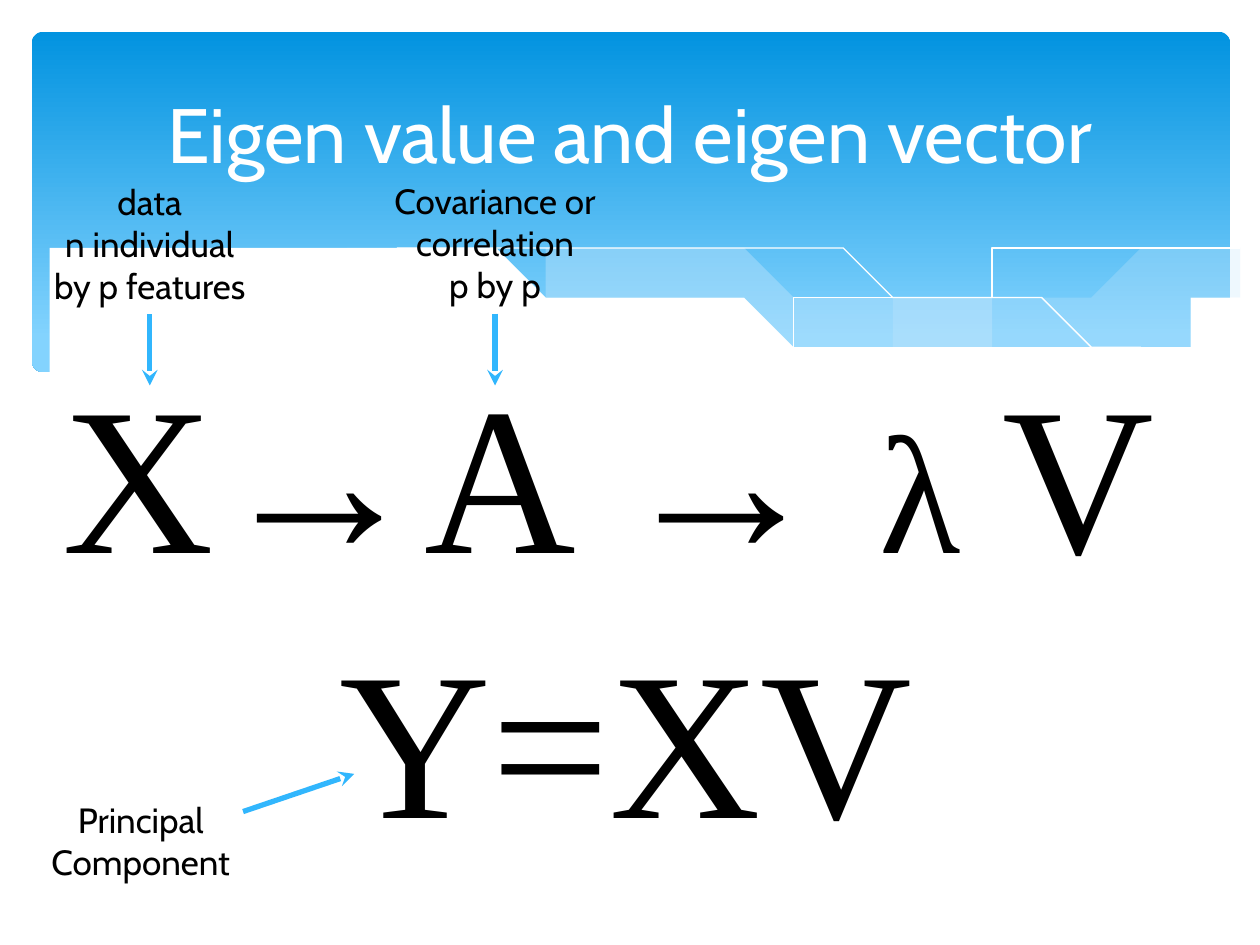
from lxml import etree
from pptx import Presentation
from pptx.dml.color import RGBColor
from pptx.enum.shapes import MSO_CONNECTOR, MSO_SHAPE
from pptx.enum.text import MSO_ANCHOR, PP_ALIGN
from pptx.oxml.ns import qn
from pptx.util import Cm, Pt

WHITE = RGBColor(0xFF, 0xFF, 0xFF)
BLACK = RGBColor(0, 0, 0)
DEEP_BLUE = RGBColor(0x02, 0x93, 0xE0)
LIGHT_BLUE = RGBColor(0x83, 0xD3, 0xFE)
MIST = RGBColor(0xC6, 0xE7, 0xFC)
ARROW_BLUE = RGBColor(0x31, 0xB6, 0xFD)
SANS, SERIF = "Cabin", "Times New Roman"

TITLE = "Eigen value and eigen vector"

# (left, top, width, height) in cm, then paragraphs of (text, size) runs
FORMULAS = [
    ((0.3, 6.81, 23.93, 5.38), [[("X→A → ", 120), ("λ ", 96), ("V", 120)]]),
    ((0.66, 12.14, 23.93, 5.38), [[("Y=XV", 120)]]),
]
LABELS = [
    ((0.66, 3.51, 4.72, 2.82), [[("data", 20)], [("n individual by p features", 20)]]),
    ((7.62, 3.5, 4.72, 2.82), [[("Covariance or correlation", 20)], [("p by p", 20)]]),
    ((0.48, 15.98, 4.72, 1.96), [[("Principal", 20)], [("Component", 20)]]),
]
ARROWS = [
    ((3.02, 6.33), (3.02, 7.77)),
    ((9.98, 6.32), (9.98, 7.77)),
    ((4.9, 16.36), (7.14, 15.6)),
]

# Wave edges: points in cm that a smooth curve passes through
RIGHT_BAND = [
    [(24.79, 5.08), (23.75, 5.26), (22.63, 5.49), (21.13, 5.84), (19.13, 6.3),
     (17.93, 6.53), (16.79, 6.73)],
    [(16.79, 6.73), (17.55, 6.83), (18.92, 6.99), (20.4, 7.06), (21.69, 7.01),
     (22.78, 6.86), (23.75, 6.65), (24.79, 6.27)],
]
MIDDLE_BAND = [
    [(22.68, 6.93), (21.26, 6.73), (19.69, 6.45), (17.93, 6.1), (15.98, 5.64),
     (14.45, 5.28), (13.06, 5.03), (11.81, 4.85), (10.67, 4.75), (9.17, 4.7),
     (7.95, 4.78), (7.26, 4.85)],
    [(7.26, 4.85), (8.69, 5.05), (10.26, 5.36), (11.4, 5.64), (13.46, 6.1),
     (15.27, 6.48), (16.89, 6.76), (18.34, 6.96), (19.63, 7.04), (20.78, 7.06),
     (21.77, 7.04), (22.68, 6.93)],
]
FALLING_LINE = [
    (7.85, 4.95), (8.74, 4.83), (10.19, 4.75), (11.91, 4.8), (13.54, 4.93),
    (15.44, 5.18), (17.65, 5.56), (20.19, 6.12), (23.04, 6.91)]
RISING_LINE = [
    (15.57, 6.53), (17.07, 6.12), (19, 5.66), (21.23, 5.18), (22.73, 4.93),
    (23.83, 4.78), (24.77, 4.7)]
WHITE_WAVE = [
    [(0.58, 5.41), (1.32, 5.11), (2.41, 4.85), (3.71, 4.7), (4.9, 4.67), (6.35, 4.72),
     (8.03, 4.93), (9.93, 5.26), (12.07, 5.77), (14.1, 6.22), (15.9, 6.55),
     (17.48, 6.81), (18.9, 6.96), (20.55, 7.04), (21.92, 6.96), (23.11, 6.78),
     (24.13, 6.5), (24.82, 6.25)],
    [(24.82, 8.36), (0.58, 8.36)],
]


def smooth(knots, steps=4):
    """Return points on a Catmull-Rom curve through the knots."""
    if len(knots) < 3:
        return knots
    padded = [knots[0], *knots, knots[-1]]
    curve = [knots[0]]
    for a, b, c, d in zip(padded, padded[1:], padded[2:], padded[3:]):
        for step in range(1, steps + 1):
            t = step / steps
            curve.append(tuple(
                (2 * q + (r - p) * t + (2 * p - 5 * q + 4 * r - s) * t**2
                 + (3 * q - p - 3 * r + s) * t**3) / 2
                for p, q, r, s in zip(a, b, c, d)))
    return curve


def add_outline(shapes, edges, closed):
    points = [point for edge in edges for point in smooth(edge)]
    builder = shapes.build_freeform(*points[0], scale=Cm(1))
    builder.add_line_segments(points[1:], close=closed)
    outline = builder.convert_to_shape()
    outline.shadow.inherit = False
    return outline


def add_wave(shapes, edges, color, opacity=100):
    wave = add_outline(shapes, edges, True)
    wave.line.fill.background()
    wave.fill.solid()
    wave.fill.fore_color.rgb = color
    if opacity < 100:
        tint = next(wave.element.spPr.iter(qn("a:srgbClr")))
        etree.SubElement(tint, qn("a:alpha"), val=str(opacity * 1000))


def add_hairline(shapes, knots):
    hairline = add_outline(shapes, [knots], False)
    hairline.fill.background()
    hairline.line.color.rgb = WHITE
    hairline.line.width = Pt(0)


def add_banner(shapes):
    banner = shapes.add_shape(
        MSO_SHAPE.ROUNDED_RECTANGLE, Cm(0.64), Cm(0.64), Cm(24.16), Cm(6.86))
    banner.adjustments[0] = 0.034
    banner.shadow.inherit = False
    banner.line.fill.background()
    banner.fill.gradient()
    banner.fill.gradient_angle = 270
    for stop, color, position in zip(
            banner.fill.gradient_stops, (DEEP_BLUE, LIGHT_BLUE), (0, 0.9)):
        stop.color.rgb = color
        stop.position = position
    add_wave(shapes, RIGHT_BAND, MIST, 29)
    add_wave(shapes, MIDDLE_BAND, MIST, 40)
    add_hairline(shapes, FALLING_LINE)
    add_hairline(shapes, RISING_LINE)
    add_wave(shapes, WHITE_WAVE, WHITE)


def write(frame, paragraphs, font_name, color):
    frame.word_wrap = True
    for index, runs in enumerate(paragraphs):
        paragraph = frame.add_paragraph() if index else frame.paragraphs[0]
        paragraph.alignment = PP_ALIGN.CENTER
        for text, size in runs:
            run = paragraph.add_run()
            run.text = text
            run.font.name = font_name
            run.font.size = Pt(size)
            run.font.color.rgb = color


def add_arrow(shapes, start, end):
    arrow = shapes.add_connector(
        MSO_CONNECTOR.STRAIGHT, *(Cm(value) for value in (*start, *end)))
    arrow.line.color.rgb = ARROW_BLUE
    arrow.line.width = Pt(3)
    etree.SubElement(arrow.line._get_or_add_ln(), qn("a:tailEnd"), type="stealth")
    etree.SubElement(arrow.element.spPr, qn("a:effectLst"))


def main():
    deck = Presentation()
    deck.slide_width, deck.slide_height = Cm(25.4), Cm(19.05)
    shapes = deck.slides.add_slide(deck.slide_layouts[5]).shapes
    add_banner(shapes)

    title = shapes.title
    shapes.element.append(title.element)  # bring in front of the banner
    title.left, title.top, title.width, title.height = (
        Cm(1.27), Cm(0.94), Cm(22.86), Cm(3.48))
    title.text_frame.vertical_anchor = MSO_ANCHOR.MIDDLE
    write(title.text_frame, [[(TITLE, 44)]], SANS, WHITE)

    for blocks, font_name in ((FORMULAS, SERIF), (LABELS, SANS)):
        for place, paragraphs in blocks:
            block = shapes.add_textbox(*(Cm(value) for value in place))
            write(block.text_frame, paragraphs, font_name, BLACK)
    for start, end in ARROWS:
        add_arrow(shapes, start, end)
    deck.save("out.pptx")


if __name__ == "__main__":
    main()
